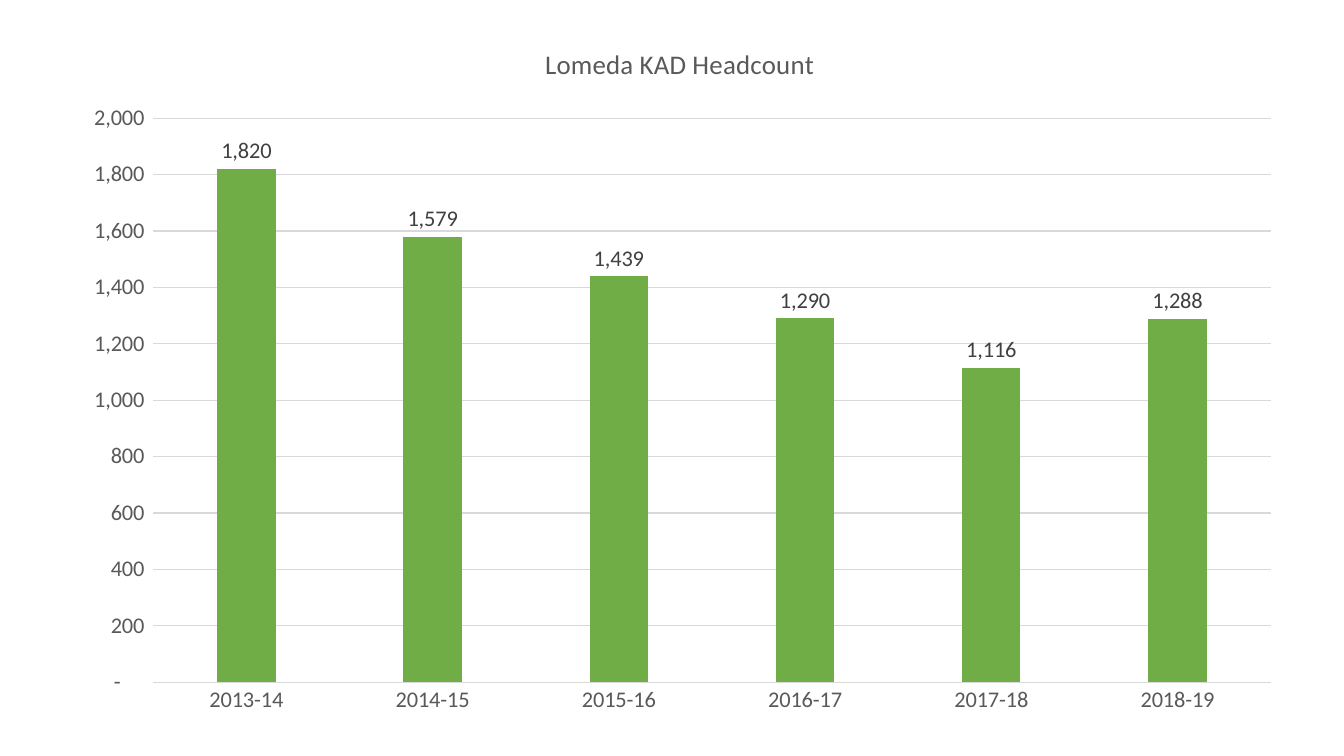
from pptx import Presentation
from pptx.chart.data import CategoryChartData
from pptx.dml.color import RGBColor
from pptx.enum import chart as ch
from pptx.util import Pt

NUMBER_FORMAT = '_(* #,##0_);_(* \\(#,##0\\);_(* "-"??_);_('
GRAY, LINE_GRAY = "595959", "D9D9D9"


def paint(color_format, color):
    color_format.rgb = RGBColor.from_string(color)


def style_font(font, size, color):
    font.name = "Calibri"
    font.size = Pt(size)
    font.bold = False
    paint(font.color, color)


prs = Presentation()
prs.slide_width, prs.slide_height = Pt(960), Pt(540)
slide = prs.slides.add_slide(prs.slide_layouts[6])

# Headcount by academic year
headcount = CategoryChartData(number_format=NUMBER_FORMAT)
headcount.categories = [f"{year}-{year % 100 + 1}" for year in range(2013, 2019)]
headcount.add_series("Series 1", (1820, 1579, 1439, 1290, 1116, 1288))
chart = slide.shapes.add_chart(
    ch.XL_CHART_TYPE.COLUMN_CLUSTERED,
    Pt(46.08), Pt(15.12), Pt(879.12), Pt(504.72), headcount).chart
style_font(chart.font, 16, "000000")
chart.has_legend = False

# Title
title = chart.chart_title.text_frame
title.text = "Lomeda KAD Headcount"
style_font(title.paragraphs[0].runs[0].font, 19.2, GRAY)
chart.chart_title.include_in_layout = False

# Axes
years, counts = chart.category_axis, chart.value_axis
for axis in (years, counts):
    axis.major_tick_mark = axis.minor_tick_mark = ch.XL_TICK_MARK.NONE
    style_font(axis.tick_labels.font, 16, GRAY)
counts.minimum_scale, counts.maximum_scale, counts.major_unit = 0, 2000, 200
counts.tick_labels.number_format = NUMBER_FORMAT
counts.tick_labels.number_format_is_linked = False
counts.format.line.fill.background()
counts.has_major_gridlines = True
for line in (years.format.line, counts.major_gridlines.format.line):
    line.width = Pt(0.75)
    paint(line.color, LINE_GRAY)

# Columns
columns = chart.plots[0]
columns.gap_width, columns.overlap = 219, -27
columns.vary_by_categories = False
students = columns.series[0]
students.format.fill.solid()
paint(students.format.fill.fore_color, "70AD47")

# Value labels
labels = students.data_labels
labels.show_value = True
labels.position = ch.XL_LABEL_POSITION.OUTSIDE_END
labels.number_format = NUMBER_FORMAT
labels.number_format_is_linked = False
style_font(labels.font, 16, "404040")

prs.save("out.pptx")
